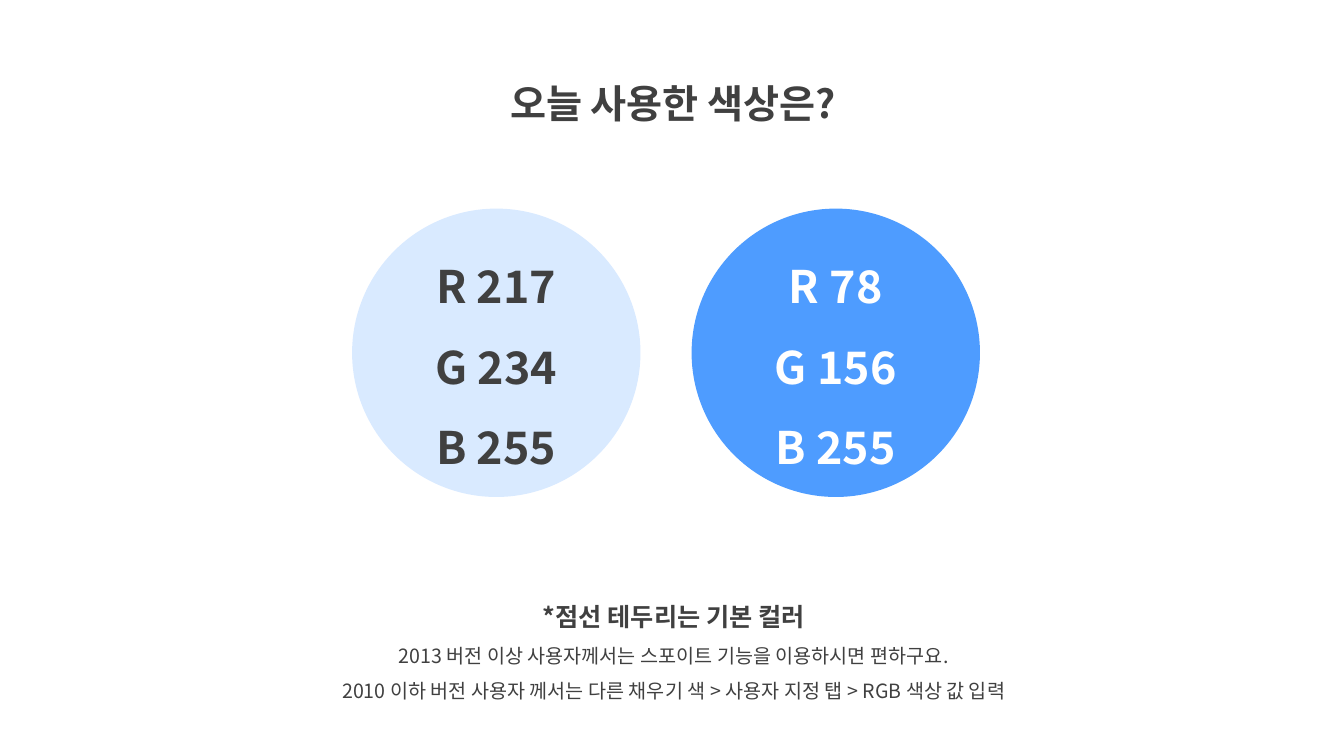
from dataclasses import dataclass

from lxml.etree import SubElement
from pptx import Presentation
from pptx.dml.color import RGBColor
from pptx.enum.shapes import MSO_SHAPE
from pptx.enum.text import MSO_ANCHOR, PP_ALIGN
from pptx.oxml.ns import qn
from pptx.util import Pt


@dataclass(frozen=True)
class Theme:
    font: str = "Noto Sans CJK KR"
    dark: RGBColor = RGBColor(64, 64, 64)
    white: RGBColor = RGBColor(255, 255, 255)
    pale_blue: RGBColor = RGBColor(217, 234, 255)
    blue: RGBColor = RGBColor(78, 156, 255)
    title: int = 28
    swatch: int = 32
    heading: int = 18
    note: int = 14


THEME = Theme()


def write_lines(tf, lines, color, anchor=MSO_ANCHOR.TOP):
    """Fill a text frame with centred (text, size, bold) lines."""
    tf.word_wrap = True
    tf.vertical_anchor = anchor
    for i, (text, size, bold) in enumerate(lines):
        p = tf.add_paragraph() if i else tf.paragraphs[0]
        p.text = text
        p.alignment = PP_ALIGN.CENTER
        p.line_spacing = 1.5
        p.font.size = Pt(size)
        p.font.bold = bold
        p.font.color.rgb = color
        p.font.name = THEME.font
        # Korean glyphs take the East Asian typeface
        props = p._p.get_or_add_pPr().find(qn("a:defRPr"))
        SubElement(props, qn("a:ea"), typeface=THEME.font)


def place(sp, left, top, width, height):
    sp.left, sp.top, sp.width, sp.height = Pt(left), Pt(top), Pt(width), Pt(height)


def add_title(s, text):
    sp = s.shapes.title
    place(sp, 314, 36, 333.5, 52)
    write_lines(sp.text_frame, [(text, THEME.title, True)], THEME.dark)


def add_swatch(s, left, fill, color):
    """Draw a circle that names its own RGB values."""
    sp = s.shapes.add_shape(MSO_SHAPE.OVAL, Pt(left), Pt(149), Pt(206), Pt(206))
    sp.shadow.inherit = False
    sp.fill.solid()
    sp.fill.fore_color.rgb = fill
    sp.line.fill.background()
    lines = [(f"{name} {value}", THEME.swatch, True) for name, value in zip("RGB", fill)]
    write_lines(sp.text_frame, lines, color, MSO_ANCHOR.MIDDLE)


def add_notes_text(s, heading, notes):
    sp = s.shapes.add_textbox(Pt(193.5), Pt(415.5), Pt(575.5), Pt(91))
    lines = [(heading, THEME.heading, True)]
    lines += [(note, THEME.note, False) for note in notes]
    write_lines(sp.text_frame, lines, THEME.dark)


def main():
    prs = Presentation()
    prs.slide_width, prs.slide_height = Pt(960), Pt(540)
    s = prs.slides.add_slide(prs.slide_layouts[5])

    # Title
    add_title(s, "오늘 사용한 색상은?")

    # Colour swatches
    swatches = [(THEME.pale_blue, THEME.dark), (THEME.blue, THEME.white)]
    for i, (fill, color) in enumerate(swatches):
        add_swatch(s, 251.5 + i * 242.5, fill, color)

    # Instructions
    add_notes_text(s, "*점선 테두리는 기본 컬러", [
        "2013 버전 이상 사용자께서는 스포이트 기능을 이용하시면 편하구요.",
        "2010 이하 버전 사용자 께서는 다른 채우기 색 > 사용자 지정 탭 > RGB 색상 값 입력",
    ])

    prs.save("out.pptx")


if __name__ == "__main__":
    main()
